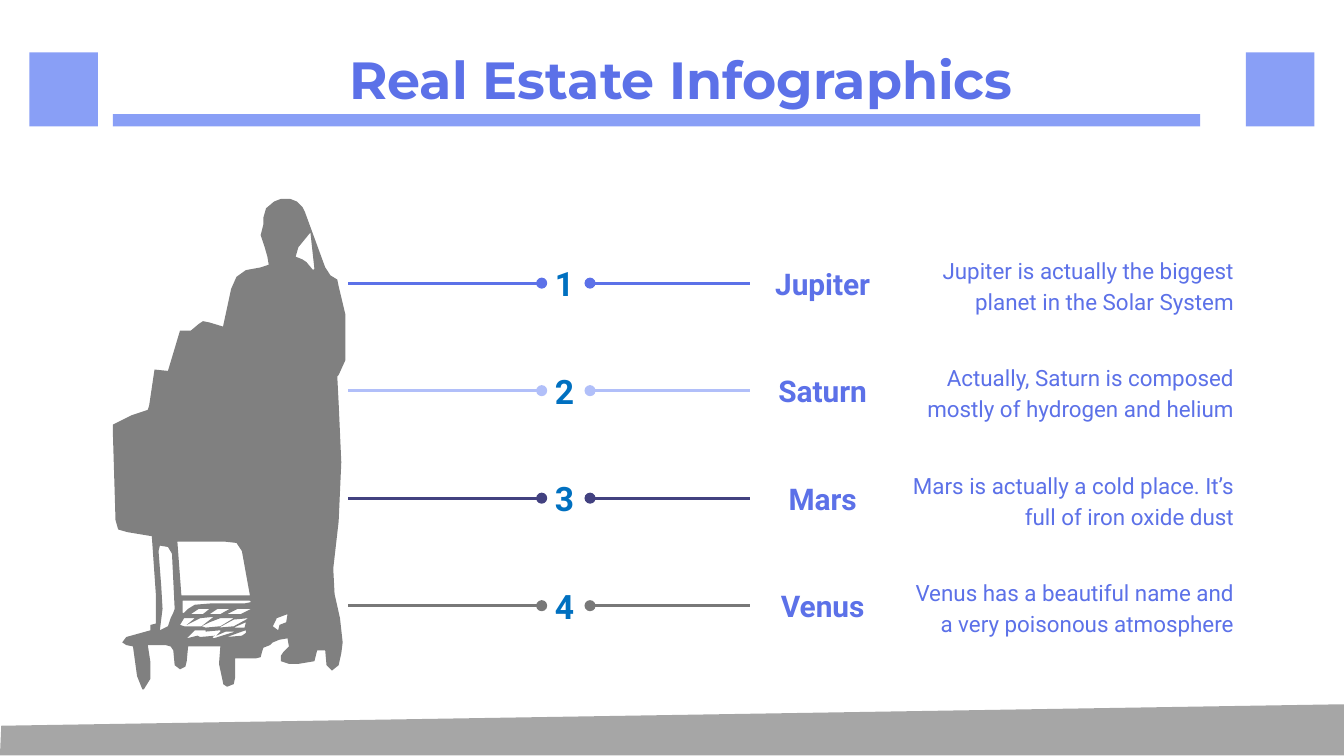
from lxml import etree
from pptx import Presentation
from pptx.dml.color import RGBColor
from pptx.enum.shapes import MSO_CONNECTOR, MSO_SHAPE
from pptx.enum.text import MSO_ANCHOR, PP_ALIGN
from pptx.oxml.ns import qn
from pptx.util import Pt

STRAIGHT, RECTANGLE = MSO_CONNECTOR.STRAIGHT, MSO_SHAPE.RECTANGLE
TOP, MIDDLE = MSO_ANCHOR.TOP, MSO_ANCHOR.MIDDLE
LEFT, CENTER, RIGHT = PP_ALIGN.LEFT, PP_ALIGN.CENTER, PP_ALIGN.RIGHT

INDIGO = RGBColor(0x5C, 0x71, 0xE8)
PERIWINKLE = RGBColor(0x89, 0x9F, 0xF6)
LAVENDER = RGBColor(0xB1, 0xBF, 0xF9)
NAVY = RGBColor(0x42, 0x41, 0x80)
DARK_GRAY = RGBColor(0x78, 0x78, 0x78)
BLUE = RGBColor(0x00, 0x70, 0xC0)
FIGURE_GRAY = RGBColor(0x80, 0x80, 0x80)
GROUND_GRAY = RGBColor(0xA6, 0xA6, 0xA6)

# Text formats: font values, colour, alignment, anchor, line spacing
TITLE = ({"name": "Montserrat", "size": Pt(28), "bold": True}, INDIGO, CENTER, MIDDLE, 1.0)
NUMBER = ({"name": "Roboto", "size": Pt(18), "bold": True}, BLUE, LEFT, MIDDLE, 1.0)
PLANET = ({"name": "Roboto", "size": Pt(16), "bold": True}, INDIGO, CENTER, MIDDLE, 1.0)
FACT = ({"name": "Roboto", "size": Pt(12), "bold": False}, INDIGO, RIGHT, TOP, 1.15)

# Outline points in units of 0.72 pt
BODY = [
    # Cart, left side
    (106, 513), (102, 503), (99, 481), (94, 480), (91, 478), (94, 474), (112, 469),
    (112, 465), (116, 464), (116, 442), (113, 399), (95, 396), (88, 394), (86, 387),
    (84, 322), (84, 316), (98, 309), (110, 305), (111, 302), (115, 275), (125, 276),
    (134, 246), (142, 246), (148, 241), (151, 239), (156, 240), (166, 243),
    # Shoulder and head
    (172, 215), (176, 206), (183, 201), (194, 199), (200, 197), (199, 191), (197, 184),
    (194, 175), (196, 167), (196, 162), (198, 155), (204, 150), (209, 148), (216, 148),
    (221, 150), (225, 154), (227, 158), (242, 199), (246, 205), (251, 208), (252, 213),
    # Right side and feet
    (257, 234), (257, 249), (257, 255), (257, 268), (252, 279), (251, 280), (252, 300),
    (254, 344), (252, 388), (248, 423), (249, 442), (253, 460), (255, 478), (254, 486),
    (252, 495), (247, 499), (243, 495), (242, 484), (236, 484), (234, 492), (222, 494),
    (215, 494), (209, 492), (209, 488), (211, 485), (215, 481), (214, 475), (208, 476),
    # Cart wheels
    (203, 478), (201, 480), (196, 482), (195, 485), (194, 489), (190, 490), (175, 490),
    (175, 504), (174, 509), (169, 511), (166, 509), (166, 508), (163, 494), (164, 481),
    (140, 481), (139, 492), (138, 496), (134, 498), (130, 495), (129, 484), (127, 481),
    (123, 480), (110, 480), (112, 493), (112, 505), (107, 513),
]
OPENINGS = [
    [(161, 473), (164, 470), (164, 469), (153, 470), (153, 469), (145, 469), (139, 475),
     (147, 473), (149, 474), (160, 473), (158, 474), (159, 475), (175, 470), (168, 470)],
    [(139, 465), (145, 460), (137, 460), (134, 465), (137, 466), (150, 466), (153, 467),
     (164, 466), (174, 460), (164, 460), (156, 463), (150, 466), (159, 459), (149, 460)],
    [(132, 403), (135, 443), (186, 443), (180, 410), (176, 404), (167, 403)],
    [(119, 469), (125, 466), (127, 460), (129, 456), (130, 453), (128, 412), (125, 407),
     (119, 406), (118, 410), (120, 436), (121, 453)],
    [(233, 201), (234, 200), (231, 173), (222, 184), (220, 191), (225, 193), (228, 195)],
    [(187, 448), (186, 447), (136, 447), (136, 456), (137, 456), (140, 453), (145, 450),
     (157, 449), (182, 449)],
    [(163, 467), (174, 466), (185, 460), (174, 461)],
    [(207, 469), (208, 465), (213, 463), (214, 457), (206, 460), (203, 466)],
    [(187, 453), (177, 453), (169, 457), (179, 457)],
    [(156, 453), (148, 453), (142, 457), (151, 457)],
    [(171, 453), (162, 453), (156, 457), (164, 457)],
    [(169, 474), (180, 473), (183, 471), (183, 469), (180, 470)],
    [(174, 467), (182, 467), (183, 463)],
]
GROUND = [(1, 540), (1000, 524), (1000, 562), (0, 562)]

prs = Presentation()
prs.slide_width, prs.slide_height = Pt(720), Pt(405)
slide = prs.slides.add_slide(prs.slide_layouts[6])
shapes = slide.shapes


def add_text(words, left, top, width, height, style):
    font_values, color, align, anchor, spacing = style
    frame = shapes.add_textbox(Pt(left), Pt(top), Pt(width), Pt(height)).text_frame
    frame_values = {"word_wrap": True, "vertical_anchor": anchor, "margin_left": Pt(7.2),
                    "margin_right": Pt(7.2), "margin_top": Pt(7.2), "margin_bottom": Pt(7.2)}
    for key, value in frame_values.items():
        setattr(frame, key, value)
    paragraph = frame.paragraphs[0]
    paragraph.alignment, paragraph.line_spacing = align, spacing
    run = paragraph.add_run()
    run.text = words
    for key, value in font_values.items():
        setattr(run.font, key, value)
    run.font.color.rgb = color


def paint(shape, color):
    shape.shadow.inherit = False
    shape.fill.solid()
    shape.fill.fore_color.rgb = color
    shape.line.fill.background()


# Header: title, underline and side blocks
add_text("Real Estate Infographics", 157.7, 23, 414, 38.2, TITLE)
for left, top, width, height in [(60.5, 61.2, 582.5, 6.5), (15.8, 28.1, 36.7, 39.6),
                                 (667.4, 28.1, 36.7, 39.6)]:
    paint(shapes.add_shape(RECTANGLE, Pt(left), Pt(top), Pt(width), Pt(height)), PERIWINKLE)

# Planet rows: a number between two dotted lines, a name and a fact
rows = [
    ("Jupiter", "Jupiter is actually the biggest planet in the Solar System", INDIGO),
    ("Saturn", "Actually, Saturn is composed mostly of hydrogen and helium", LAVENDER),
    ("Mars", "Mars is actually a cold place. It’s full of iron oxide dust", NAVY),
    ("Venus", "Venus has a beautiful name and a very poisonous atmosphere", DARK_GRAY),
]
for index, (planet, fact, color) in enumerate(rows):
    middle = 151.7 + 57.6 * index
    add_text(str(index + 1), 290.2, middle - 17.6, 25.9, 35.2, NUMBER)
    add_text(planet, 401.8, middle - 17.6, 77.8, 35.2, PLANET)
    add_text(fact, 474.5, middle - 23.5, 193.7, 46, FACT)
    for dot_x, end_x in [(290.2, 186.5), (316.1, 401.8)]:
        leader = shapes.add_connector(STRAIGHT, Pt(dot_x), Pt(middle), Pt(end_x), Pt(middle))
        leader.line.color.rgb = color
        leader.line.width = Pt(1.5)
        properties = leader._element.spPr
        etree.SubElement(properties.find(qn("a:ln")), qn("a:headEnd"), type="oval")
        etree.SubElement(properties, qn("a:effectLst"))

# Figure with a loaded cart, and the ground
for outline, openings, color in [(BODY, OPENINGS, FIGURE_GRAY), (GROUND, [], GROUND_GRAY)]:
    builder = shapes.build_freeform(*outline[0], scale=Pt(0.72))
    builder.add_line_segments(outline[1:], close=True)
    for opening in openings:
        builder.move_to(*opening[0])
        builder.add_line_segments(opening[1:], close=True)
    paint(builder.convert_to_shape(), color)

prs.save("out.pptx")
